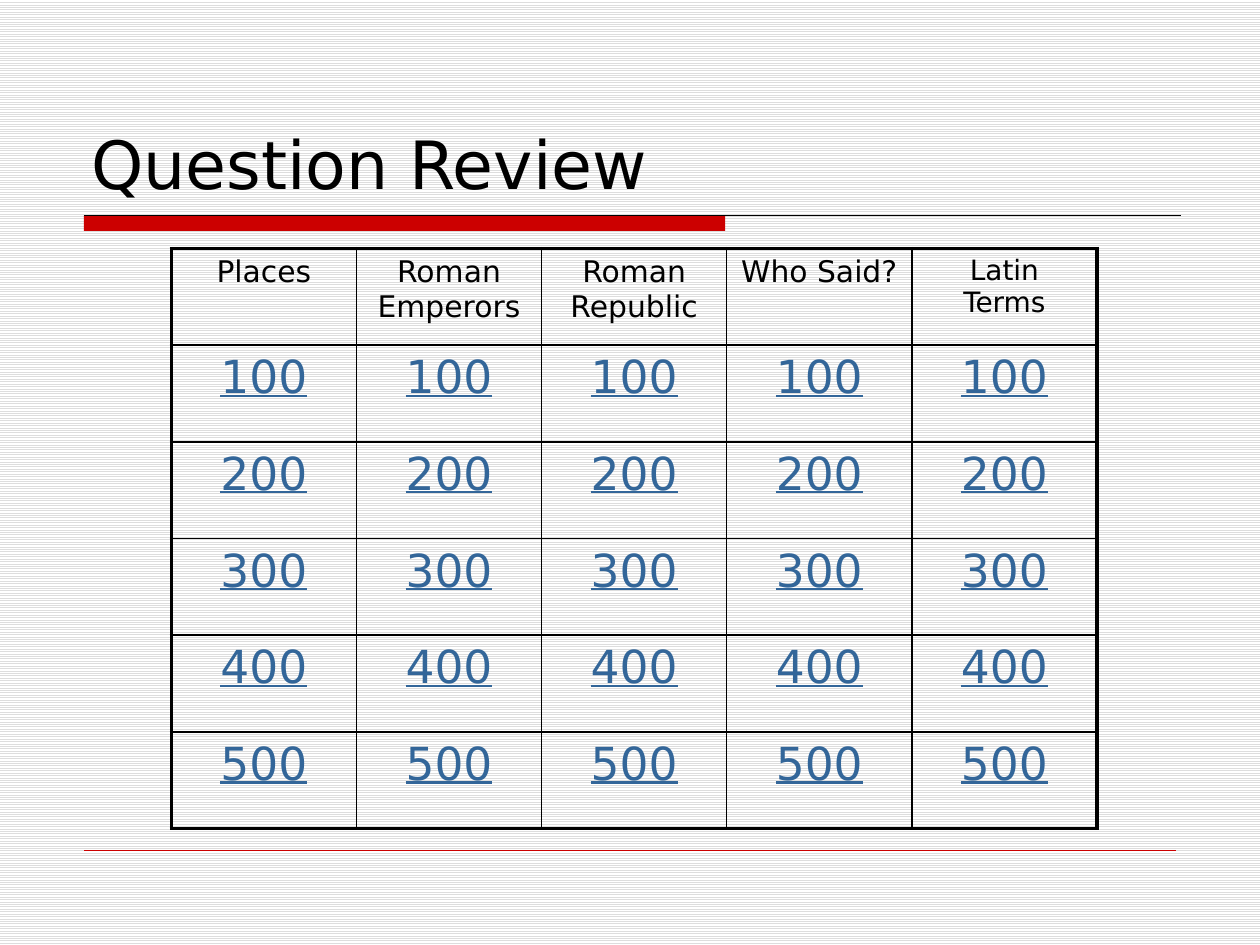
from dataclasses import dataclass

from lxml import etree
from pptx import Presentation
from pptx.dml.color import RGBColor
from pptx.enum.dml import MSO_PATTERN
from pptx.enum.shapes import MSO_CONNECTOR, MSO_SHAPE
from pptx.enum.text import MSO_ANCHOR, PP_ALIGN
from pptx.oxml.ns import qn
from pptx.util import Pt

STRIPES = MSO_PATTERN.LIGHT_HORIZONTAL
STRAIGHT = MSO_CONNECTOR.STRAIGHT
RECTANGLE = MSO_SHAPE.RECTANGLE
BOTTOM = MSO_ANCHOR.BOTTOM
CENTER = PP_ALIGN.CENTER


@dataclass(frozen=True)
class Theme:
    font: str = "DejaVu Sans"
    ink: str = "000000"
    accent: str = "CC0000"
    link: str = "336699"
    stripe: str = "DDDDDD"
    paper: str = "FFFFFF"
    title_size: float = 38
    header_size: float = 17
    small_header_size: float = 16
    value_size: float = 26
    inner_border: float = 1
    outer_border: float = 2.25
    cell_margin: float = 7.5


class SlideBuilder:
    def __init__(self, slide, theme):
        self.slide = slide
        self.theme = theme

    def background(self):
        fill = self.slide.background.fill
        fill.patterned()
        fill.pattern = STRIPES
        fill.fore_color.rgb = RGBColor.from_string(self.theme.stripe)
        fill.back_color.rgb = RGBColor.from_string(self.theme.paper)

    def style(self, p, size, color):
        p.font.name = self.theme.font
        p.font.size = Pt(size)
        p.font.color.rgb = RGBColor.from_string(color)

    def title(self, text, x, y, w, h):
        tf = self.slide.shapes.add_textbox(Pt(x), Pt(y), Pt(w), Pt(h)).text_frame
        tf.word_wrap = True
        tf.vertical_anchor = BOTTOM
        p = tf.paragraphs[0]
        p.text = text
        self.style(p, self.theme.title_size, self.theme.ink)

    def bar(self, x, y, w, h, color):
        sp = self.slide.shapes.add_shape(RECTANGLE, Pt(x), Pt(y), Pt(w), Pt(h))
        sp.shadow.inherit = False
        sp.fill.solid()
        sp.fill.fore_color.rgb = RGBColor.from_string(color)
        sp.line.fill.background()

    def rule(self, x1, x2, y, color, width):
        line = self.slide.shapes.add_connector(STRAIGHT, Pt(x1), Pt(y), Pt(x2), Pt(y))
        line.line.color.rgb = RGBColor.from_string(color)
        line.line.width = Pt(width)
        etree.SubElement(line._element.spPr, qn("a:effectLst"))

    def borders(self, cell, outer_sides):
        tc_pr = cell._tc.get_or_add_tcPr()
        for i, (side, outer) in enumerate(outer_sides.items()):
            width = self.theme.outer_border if outer else self.theme.inner_border
            ln = etree.Element(qn(f"a:ln{side}"), w=str(Pt(width)))
            fill = etree.SubElement(ln, qn("a:solidFill"))
            etree.SubElement(fill, qn("a:srgbClr"), val=self.theme.ink)
            tc_pr.insert(i, ln)  # borders come before the cell fill

    def table(self, rows, x, y, col_w, row_h, small_headers):
        t = self.theme
        n_rows, n_cols = len(rows), len(rows[0])
        table = self.slide.shapes.add_table(
            n_rows, n_cols, Pt(x), Pt(y), Pt(col_w * n_cols), Pt(row_h * n_rows)).table
        table.first_row = table.horz_banding = False
        for column in table.columns:
            column.width = Pt(col_w)
        for r, row in enumerate(rows):
            table.rows[r].height = Pt(row_h)
            for c, text in enumerate(row):
                cell = table.cell(r, c)
                cell.margin_left = cell.margin_right = Pt(t.cell_margin)
                cell.fill.background()
                self.borders(cell, {"L": c == 0, "R": c == n_cols - 1,
                                    "T": r == 0, "B": r == n_rows - 1})
                p = cell.text_frame.paragraphs[0]
                p.text = text
                p.alignment = CENTER
                if r == 0:
                    size = t.small_header_size if text in small_headers else t.header_size
                    self.style(p, size, t.ink)
                else:
                    self.style(p, t.value_size, t.link)
                    p.font.underline = True


def main():
    prs = Presentation()
    prs.slide_width, prs.slide_height = Pt(720), Pt(540)
    theme = Theme()
    s = SlideBuilder(prs.slides.add_slide(prs.slide_layouts[6]), theme)

    # Striped background, title underline and footer rule
    s.background()
    s.bar(48, 123.2, 366.4, 8.7, theme.accent)
    s.rule(48, 674.7, 123.2, theme.ink, 0.75)
    s.rule(48, 672, 486, theme.accent, 0.25)

    # Title
    s.title("Question Review", 45, 23.5, 630, 96)

    # Question board: one column per category, one row per value
    categories = ["Places", "Roman Emperors", "Roman Republic", "Who Said?", "Latin Terms"]
    values = [[str(v)] * len(categories) for v in range(100, 501, 100)]
    s.table([categories] + values, 97.9, 142, 105.8, 55.25, {"Latin Terms"})

    prs.save("out.pptx")


if __name__ == "__main__":
    main()
